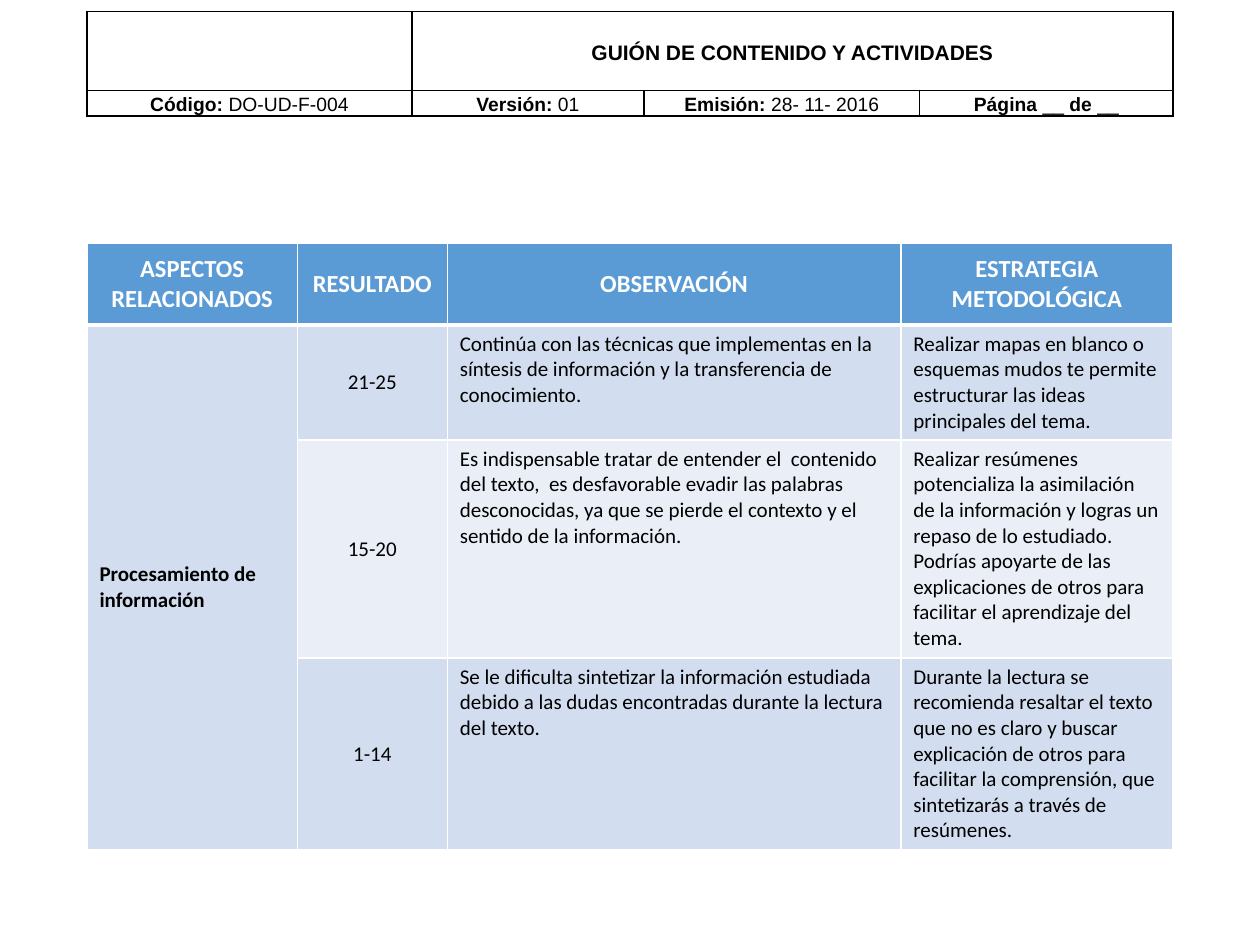
from pptx import Presentation
from pptx.dml.color import RGBColor as Rgb
from pptx.enum.text import MSO_ANCHOR as Anchor, PP_ALIGN as Align
from pptx.oxml.ns import qn
from pptx.util import Inches, Pt
from lxml.etree import SubElement as Sub

LEFT = 0.69
HEAD, DARK, PALE = "5B9BD5", "D2DEEF", "EAEFF7"
TITLES = ["ASPECTOS RELACIONADOS", "RESULTADO", "OBSERVACIÓN", "ESTRATEGIA METODOLÓGICA"]
TOPIC = "Procesamiento de información"
LEVELS = [
    ("21-25",
     "Continúa con las técnicas que implementas en la síntesis de información y la "
     "transferencia de conocimiento.",
     "Realizar mapas en blanco o esquemas mudos te permite estructurar las ideas "
     "principales del tema."),
    ("15-20",
     "Es indispensable tratar de entender el  contenido del texto,  es desfavorable evadir "
     "las palabras desconocidas, ya que se pierde el contexto y el sentido de la información.",
     "Realizar resúmenes  potencializa la asimilación de la información y logras un repaso "
     "de lo estudiado. Podrías apoyarte de las explicaciones de otros para facilitar el "
     "aprendizaje del tema."),
    ("1-14",
     "Se le dificulta sintetizar la información estudiada debido a las dudas encontradas "
     "durante la lectura del texto.",
     "Durante la lectura se recomienda resaltar el texto que no es claro y buscar "
     "explicación de otros para facilitar la comprensión, que sintetizarás a través de "
     "resúmenes."),
]
CODES = [
    [("Código: ", True), ("DO-UD-F-004", False)],
    [("Versión:", True), (" 01", False)],
    [("Emisión:", True), (" 28- 11- 2016", False)],
    [("Página ", True), ("__ ", False), ("de ", True), ("__", False)],
]


def paint(text):
    """Turn a hex string into a colour."""
    return Rgb.from_string(text)


def write(cell, parts, size=12, font="Calibri", color="000000", bold=False,
          align=Align.LEFT, anchor=Anchor.MIDDLE, space=None):
    """Fill a cell with one string or with (text, bold) parts."""
    cell.vertical_anchor = anchor
    para = cell.text_frame.paragraphs[0]
    para.alignment = align
    para.line_spacing = space
    for text, heavy in [(parts, bold)] if isinstance(parts, str) else parts:
        run = para.add_run()
        run.text = text
        run.font.size, run.font.name, run.font.bold = Pt(size), font, heavy
        run.font.color.rgb = paint(color)


def edge(cell, color, top=1, low=1):
    """Draw the four borders of a cell."""
    props = cell._tc.get_or_add_tcPr()
    for side, width in zip("LRTB", (1, 1, top, low)):
        line = Sub(props, qn(f"a:ln{side}"), w=str(Pt(width)))
        Sub(Sub(line, qn("a:solidFill")), qn("a:srgbClr"), val=color)


def grid(slide, top, cols, rows):
    """Add a plain table with the given column widths and row heights."""
    frame = slide.shapes.add_table(len(rows), len(cols), Inches(LEFT), Inches(top),
                                   Inches(sum(cols)), Inches(sum(rows)))
    table = frame.table
    table.first_row = table.horz_banding = False
    for col, width in zip(table.columns, cols):
        col.width = Inches(width)
    for row, height in zip(table.rows, rows):
        row.height = Inches(height)
    return table


def add_form(slide):
    """Add the form header with its title and codes."""
    table = grid(slide, 0.09, [2.58, 1.84, 2.19, 2.01], [0.63, 0.2])
    for cell in table.iter_cells():
        edge(cell, "000000")
        cell.fill.background()
        cell.margin_left = cell.margin_right = Inches(0.05)
        cell.margin_top = cell.margin_bottom = 0
    table.cell(0, 1).merge(table.cell(0, 3))
    look = dict(font="Arial", align=Align.CENTER, space=1.15)
    write(table.cell(0, 1), "GUIÓN DE CONTENIDO Y ACTIVIDADES", bold=True, **look)
    for col, parts in enumerate(CODES):
        write(table.cell(1, col), parts, size=11, **look)


def add_levels(slide):
    """Add the table of results, remarks and strategies."""
    table = grid(slide, 1.93, [1.67, 1.19, 3.6, 2.16], [0.65, 0.91, 1.73, 1.52])
    for row, fill in enumerate([HEAD, DARK, PALE, DARK]):
        for cell in table.rows[row].cells:
            edge(cell, "FFFFFF", top=3 if row == 1 else 1, low=3 if row == 0 else 1)
            cell.fill.solid()
            cell.fill.fore_color.rgb = paint(fill)
    table.cell(1, 0).merge(table.cell(3, 0))
    for col, text in enumerate(TITLES):
        write(table.cell(0, col), text, size=14, color="FFFFFF", bold=True,
              align=Align.CENTER)
    write(table.cell(1, 0), TOPIC, bold=True)
    for row, (score, remark, plan) in enumerate(LEVELS, 1):
        write(table.cell(row, 1), score, align=Align.CENTER)
        write(table.cell(row, 2), remark, anchor=Anchor.TOP)
        write(table.cell(row, 3), plan, anchor=Anchor.TOP)


def main():
    """Build and save the slide."""
    deck = Presentation()
    deck.slide_width, deck.slide_height = Inches(10), Inches(7.5)
    slide = deck.slides.add_slide(deck.slide_layouts[6])
    add_form(slide)
    add_levels(slide)
    deck.save("out.pptx")


if __name__ == "__main__":
    main()
